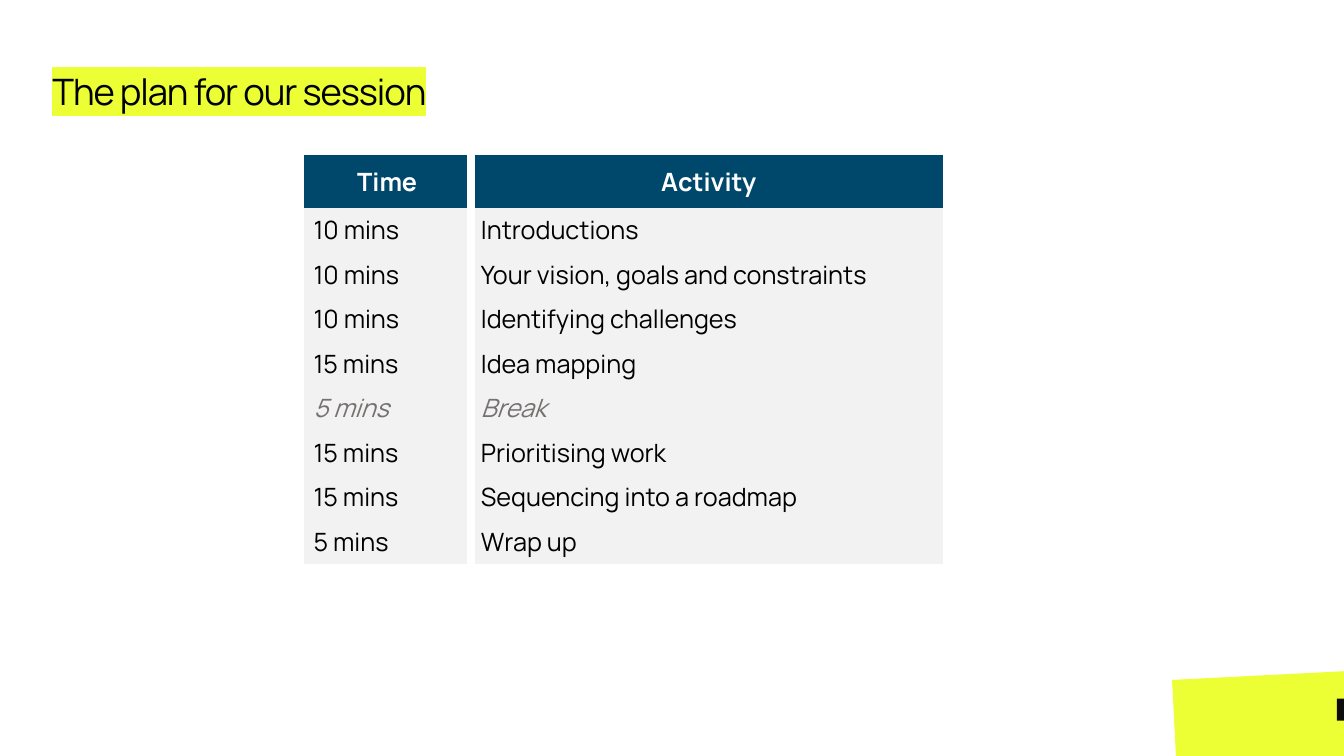
from lxml import etree
from pptx import Presentation
from pptx.dml.color import RGBColor
from pptx.enum.shapes import MSO_SHAPE
from pptx.enum.text import MSO_ANCHOR, PP_ALIGN
from pptx.oxml import parse_xml
from pptx.oxml.ns import nsdecls, qn
from pptx.util import Inches, Pt

RECT = MSO_SHAPE.RECTANGLE
MIDDLE = MSO_ANCHOR.MIDDLE
LEFT, CENTER = PP_ALIGN.LEFT, PP_ALIGN.CENTER

LIME, NAVY, PALE = "EBFF34", "00476C", "F2F2F2"
BLACK, WHITE, GREY, INK = "000000", "FFFFFF", "767171", "0D0D0D"

PLAN = [
    ("Time", "Activity"),
    ("10 mins", "Introductions"),
    ("10 mins", "Your vision, goals and constraints"),
    ("10 mins", "Identifying challenges"),
    ("15 mins", "Idea mapping"),
    ("5 mins", "Break"),
    ("15 mins", "Prioritising work"),
    ("15 mins", "Sequencing into a roadmap"),
    ("5 mins", "Wrap up"),
]


def color(code):
    return RGBColor.from_string(code)


class Deck:
    face = "Manrope"

    def __init__(self, slide):
        self.slide = slide

    def style(self, para, size, code, bold=False, slant=False):
        font = para.font
        font.name, font.size = self.face, Pt(size)
        font.bold, font.italic = bold, slant
        font.color.rgb = color(code)

    def block(self, x, y, w, h, code, turn=0):
        box = self.slide.shapes.add_shape(
            RECT, Inches(x), Inches(y), Inches(w), Inches(h))
        box.shadow.inherit = False
        box.rotation = turn
        box.fill.solid()
        box.fill.fore_color.rgb = color(code)
        box.line.fill.background()

    def title(self, text, x, y, w, h):
        box = self.slide.shapes.title
        box.left, box.top = Inches(x), Inches(y)
        box.width, box.height = Inches(w), Inches(h)
        frame = box.text_frame
        frame.word_wrap = True
        frame.vertical_anchor = MIDDLE
        frame.margin_left = frame.margin_bottom = 0
        frame.margin_top, frame.margin_right = Inches(0.05), Inches(0.1)
        para = frame.paragraphs[0]
        para.alignment = LEFT
        para.line_spacing = 1.3
        para.space_before = Pt(0)
        run = para.add_run()
        run.text = text
        self.style(para, 26, BLACK)
        # Tight letters on a highlight
        props = run.font._element
        props.set("spc", "-80")
        mark = etree.SubElement(props, qn("a:highlight"))
        etree.SubElement(mark, qn("a:srgbClr")).set("val", LIME)

    def edges(self, cell):
        props = cell._tc.get_or_add_tcPr()
        white = f'<a:solidFill><a:srgbClr val="{WHITE}"/></a:solidFill>'
        for side in ("L", "R", "T", "B"):
            wide, paint = (6, white) if side in "LR" else (0, "<a:noFill/>")
            props.append(parse_xml(
                f'<a:ln{side} {nsdecls("a")} w="{Pt(wide)}">{paint}</a:ln{side}>'))
        # The outer left side stays bare
        return props

    def cell(self, cell, text, fill, code, head=False, slant=False):
        self.edges(cell)
        cell.fill.solid()
        cell.fill.fore_color.rgb = color(fill)
        cell.vertical_anchor = MIDDLE
        cell.text = text
        para = cell.text_frame.paragraphs[0]
        para.alignment = CENTER if head else LEFT
        self.style(para, 18, code, head, slant)

    def table(self, rows, x, y, widths, top, high):
        tall = top + high * (len(rows) - 1)
        grid = self.slide.shapes.add_table(
            len(rows), len(widths), Inches(x), Inches(y),
            Inches(sum(widths)), Inches(tall)).table
        grid.first_row = grid.horz_banding = False
        for col, wide in zip(grid.columns, widths):
            col.width = Inches(wide)
        for r, row in enumerate(rows):
            head, rest = r == 0, row[1] == "Break"
            grid.rows[r].height = Inches(top if head else high)
            fill = NAVY if head else PALE
            code = WHITE if head else GREY if rest else BLACK
            for c, text in enumerate(row):
                self.cell(grid.cell(r, c), text, fill, code, head, rest)
            # No border on the outer left side
            edge = grid.cell(r, 0)._tc.tcPr
            edge.remove(edge.find(qn("a:lnL")))


def main():
    prs = Presentation()
    prs.slide_width, prs.slide_height = Inches(13.33), Inches(7.5)
    deck = Deck(prs.slides.add_slide(prs.slide_layouts[5]))

    # Corner accent
    deck.block(11.65, 6.7, 1.76, 1.02, LIME, 357.1)
    deck.block(13.26, 6.93, 0.08, 0.22, INK)

    # Heading
    deck.title("The plan for our session", 0.52, 0.5, 5.69, 0.62)

    # Agenda
    deck.table(PLAN, 3.01, 1.54, (1.66, 4.72), 0.52, 0.43)

    prs.save("out.pptx")


if __name__ == "__main__":
    main()
